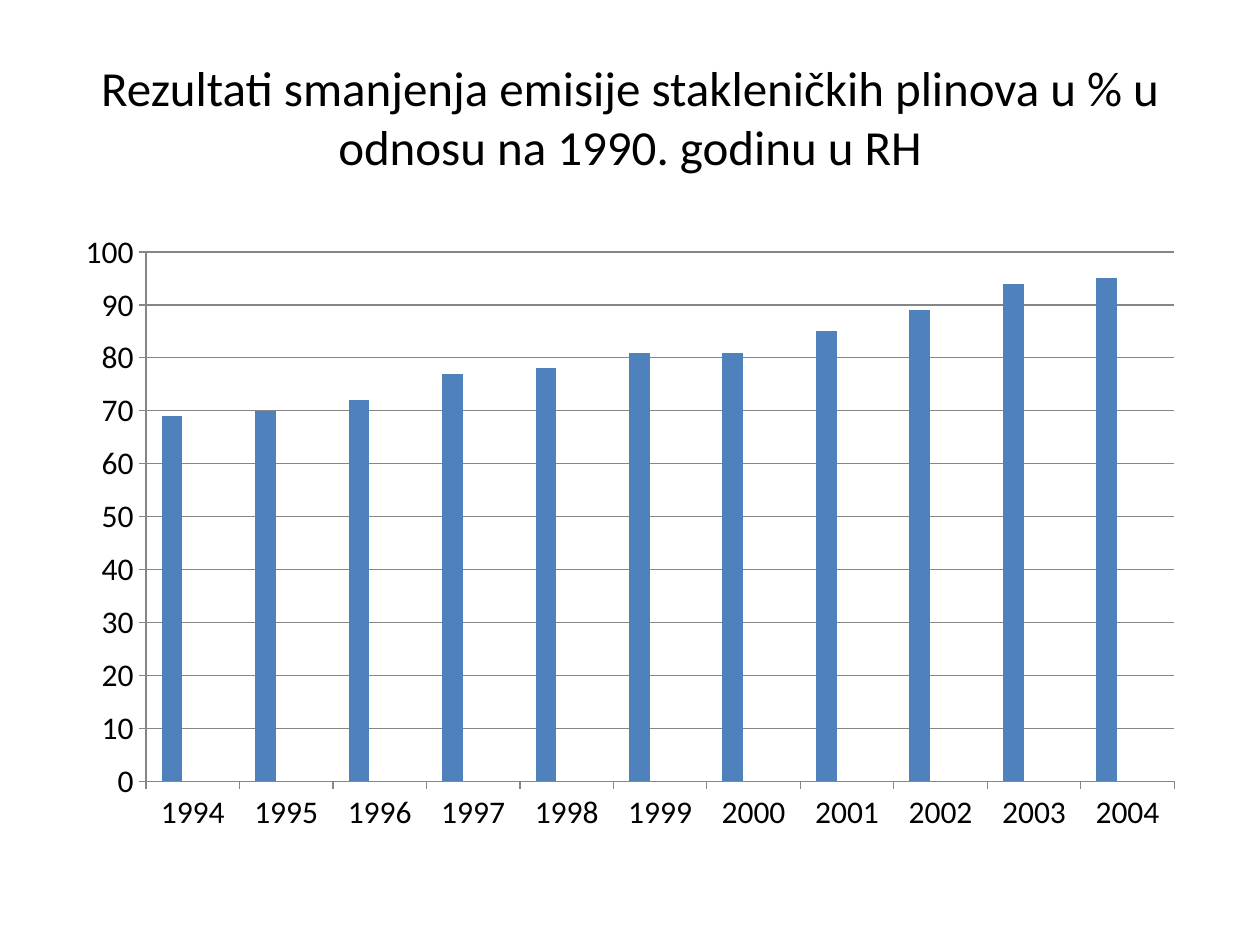
from pptx import Presentation
from pptx.chart.data import CategoryChartData
from pptx.dml.color import RGBColor
from pptx.enum.chart import XL_CHART_TYPE, XL_TICK_MARK
from pptx.enum.text import MSO_ANCHOR, PP_ALIGN
from pptx.util import Inches, Pt

COLUMN = XL_CHART_TYPE.COLUMN_CLUSTERED
OUTSIDE = XL_TICK_MARK.OUTSIDE
MIDDLE, CENTER = MSO_ANCHOR.MIDDLE, PP_ALIGN.CENTER

COLORS = {"text": "000000", "axis": "868686",
          "blue": "4F81BD", "red": "C0504D", "green": "9BBB59"}
FONT = "Calibri"
TITLE_ONLY = 5

YEARS = range(1994, 2005)
LEVELS = [69, 70, 72, 77, 78, 81, 81, 85, 89, 94, 95]
BLANK = [None] * len(LEVELS)


class Deck:
    """Holds the style and the current slide; lengths are shares of its size."""

    def __init__(self, width, height):
        self.prs = Presentation()
        self.prs.slide_width = Inches(width)
        self.prs.slide_height = Inches(height)
        self.slide = self.prs.slides.add_slide(self.prs.slide_layouts[TITLE_ONLY])

    def box(self, left, top, width, height):
        wide, high = self.prs.slide_width, self.prs.slide_height
        return [round(share * side) for share, side in
                zip((left, top, width, height), (wide, high, wide, high))]

    def color(self, name):
        return RGBColor.from_string(COLORS[name])

    def style(self, font, size):
        font.name, font.size = FONT, Pt(size)
        font.color.rgb = self.color("text")

    def line(self, line):
        line.color.rgb = self.color("axis")
        line.width = Pt(0.75)

    def title(self, text, area, size):
        shape = self.slide.shapes.title
        shape.left, shape.top, shape.width, shape.height = self.box(*area)
        frame = shape.text_frame
        frame.word_wrap = True
        frame.vertical_anchor = MIDDLE
        para = frame.paragraphs[0]
        para.alignment = CENTER
        run = para.add_run()
        run.text = text
        self.style(run.font, size)

    def columns(self, cats, series, area, size):
        data = CategoryChartData()
        data.categories = [str(cat) for cat in cats]
        for name, values, _ in series:
            data.add_series(name, values)
        chart = self.slide.shapes.add_chart(COLUMN, *self.box(*area), data).chart
        chart.has_legend = chart.has_title = False
        self.style(chart.font, size)

        # Bars
        plot = chart.plots[0]
        plot.gap_width, plot.overlap = 150, 0
        plot.vary_by_categories = False
        for bars, (_, _, hue) in zip(plot.series, series):
            bars.format.fill.solid()
            bars.format.fill.fore_color.rgb = self.color(hue)

        # Axes and grid
        for axis in (chart.category_axis, chart.value_axis):
            axis.major_tick_mark = OUTSIDE
            self.line(axis.format.line)
        scale = chart.value_axis
        scale.minimum_scale, scale.maximum_scale, scale.major_unit = 0, 100, 10
        scale.has_major_gridlines = True
        self.line(scale.major_gridlines.format.line)


def main():
    deck = Deck(10, 7.5)

    # Heading
    deck.title("Rezultati smanjenja emisije stakleničkih plinova u % u "
               "odnosu na 1990. godinu u RH", (0.05, 0.04, 0.9, 1 / 6), 28)

    # Emissions by year; the blank series keep their room beside each bar
    deck.columns(YEARS, [("Series 1", LEVELS, "blue"),
                         ("Series 2", BLANK, "red"),
                         ("Series 3", BLANK, "green")],
                 (0.05, 7 / 30, 0.9, 0.66), 18)

    deck.prs.save("out.pptx")


if __name__ == "__main__":
    main()
